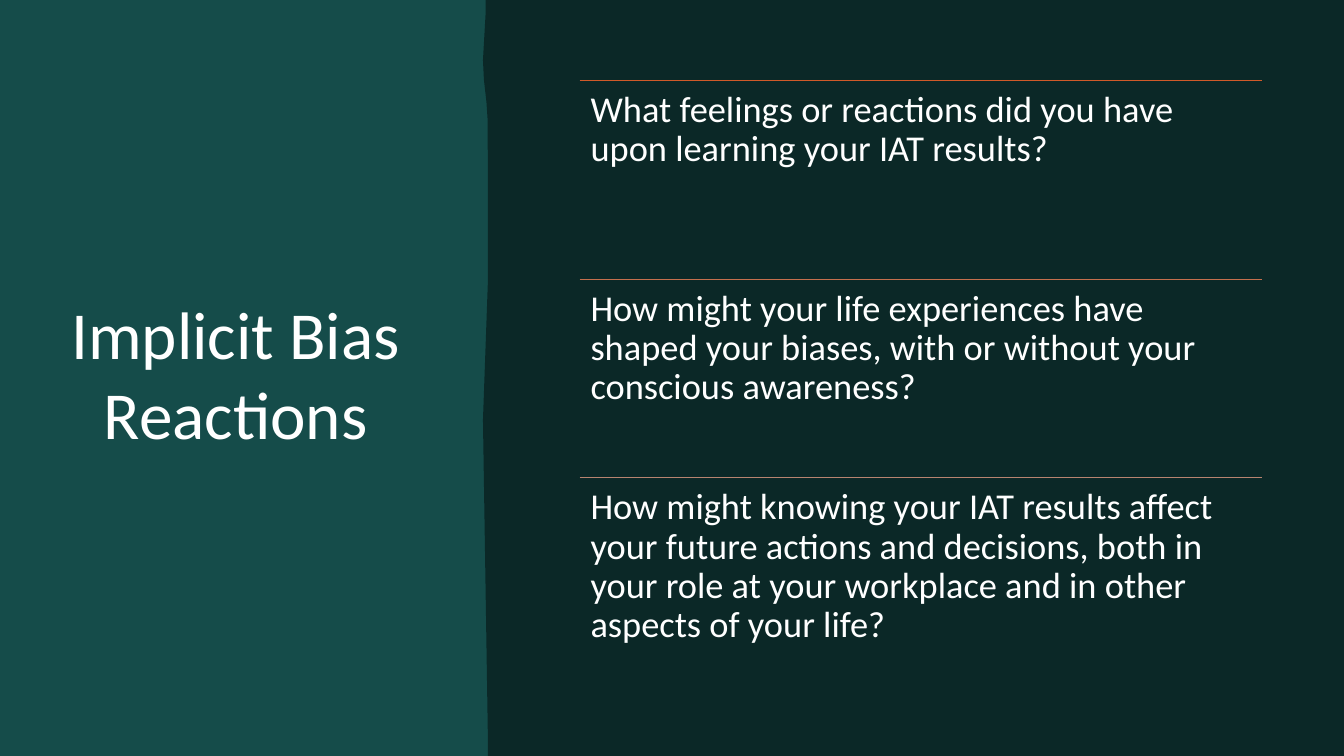
from lxml import etree
from pptx import Presentation
from pptx.dml.color import RGBColor
from pptx.enum import shapes, text
from pptx.oxml import ns
from pptx.util import Pt

WHITE = RGBColor(0xFF, 0xFF, 0xFF)
TEAL = RGBColor(0x15, 0x4C, 0x4A)
DARK = RGBColor(0x0B, 0x28, 0x27)
WIDE, HIGH = 960, 540

TITLE = "Implicit Bias Reactions"
ITEMS = [
    ("What feelings or reactions did you have upon learning your IAT results?",
     RGBColor(0xD1, 0x5A, 0x29)),
    ("How might your life experiences have shaped your biases, "
     "with or without your conscious awareness?",
     RGBColor(0xC4, 0x6F, 0x4D)),
    ("How might knowing your IAT results affect your future actions and decisions, "
     "both in your role at your workplace and in other aspects of your life?",
     RGBColor(0xB8, 0x84, 0x70)),
]
# Wavy left edge of the dark panel, from bottom to top
EDGE = [(348.5, 540), (348.5, 525), (345, 300), (348.5, 202), (348.5, 118),
        (348.3, 85), (347.5, 73), (345.7, 57), (345, 43), (347, 8)]
LEFT, TOP, WIDTH, STEP = 414, 57.4, 487.2, 141.9


def paint(shape, color):
    shape.shadow.inherit = False
    shape.fill.solid()
    shape.fill.fore_color.rgb = color
    shape.line.fill.background()


def write(words, x, y, w, h, size, inset=0, align=text.PP_ALIGN.LEFT,
          anchor=text.MSO_ANCHOR.TOP, spacing=1.0):
    frame = slide.shapes.add_textbox(Pt(x), Pt(y), Pt(w), Pt(h)).text_frame
    frame.word_wrap = True
    frame.vertical_anchor = anchor
    frame.margin_left = frame.margin_right = Pt(inset)
    frame.margin_top = frame.margin_bottom = Pt(inset)
    para = frame.paragraphs[0]
    para.text = words
    para.alignment = align
    para.line_spacing = spacing
    para.font.name = "Calibri"
    para.font.size = Pt(size)
    para.font.color.rgb = WHITE


def rule(x, y, w, color):
    line = slide.shapes.add_connector(
        shapes.MSO_CONNECTOR.STRAIGHT, Pt(x), Pt(y), Pt(x + w), Pt(y))
    line.line.color.rgb = color
    line.line.width = Pt(0.5)
    etree.SubElement(line._element.spPr, ns.qn("a:effectLst"))


deck = Presentation()
deck.slide_width, deck.slide_height = Pt(WIDE), Pt(HIGH)
slide = deck.slides.add_slide(deck.slide_layouts[6])
slide.background.fill.solid()
slide.background.fill.fore_color.rgb = DARK

paint(slide.shapes.add_shape(
    shapes.MSO_SHAPE.RECTANGLE, 0, 0, Pt(WIDE), Pt(HIGH)), TEAL)
write(TITLE, 15.1, 49, 306.7, 434.2, 48,
      align=text.PP_ALIGN.CENTER, anchor=text.MSO_ANCHOR.MIDDLE)

panel = slide.shapes.build_freeform(Pt(347), 0)
panel.add_line_segments(
    [(Pt(x), Pt(y)) for x, y in [(WIDE, 0), (WIDE, HIGH)] + EDGE])
paint(panel.convert_to_shape(), DARK)

for row, (words, color) in enumerate(ITEMS):
    y = TOP + row * STEP
    rule(LEFT, y, WIDTH, color)
    write(words, LEFT, y, WIDTH, STEP, 26, inset=7.8, spacing=0.9)

deck.save("out.pptx")
